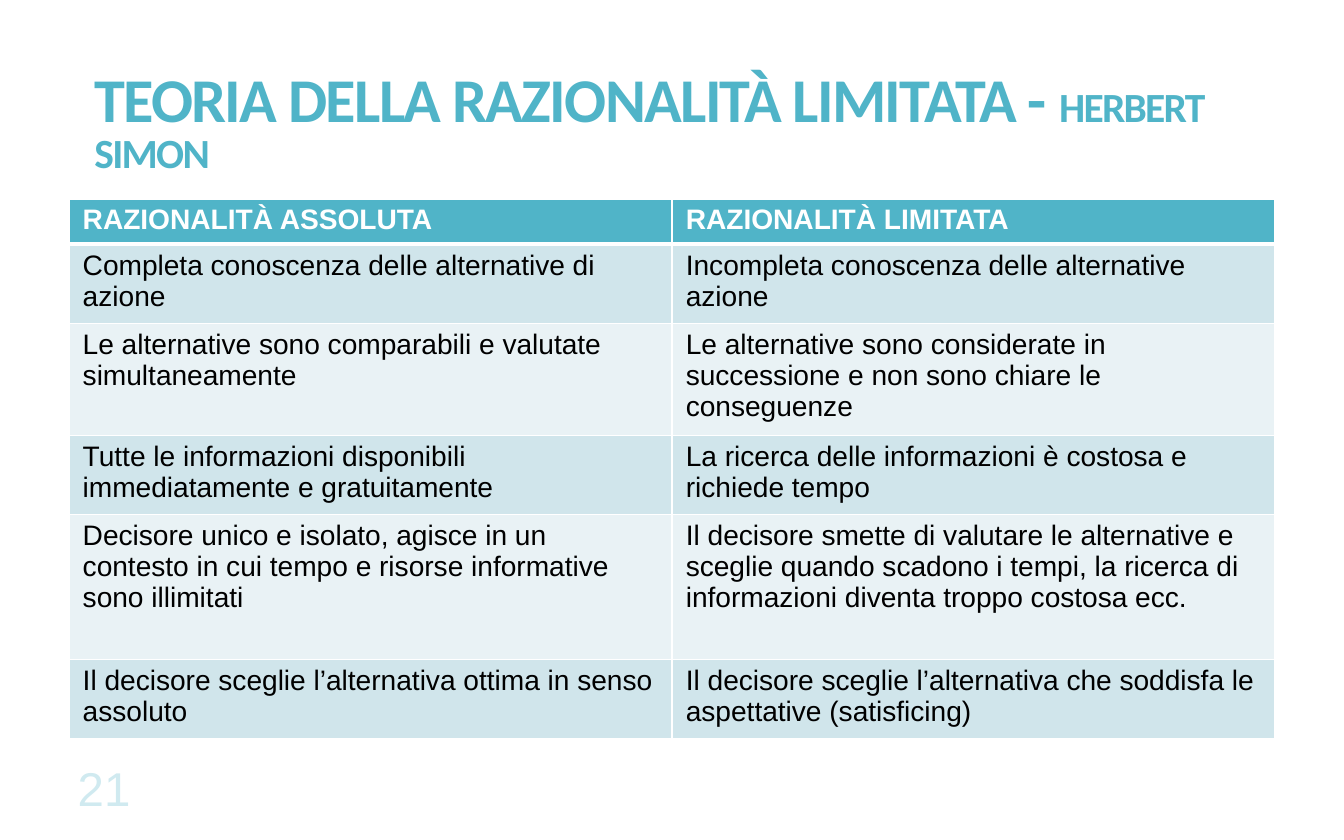
from dataclasses import dataclass

from lxml.etree import SubElement
from pptx import Presentation
from pptx.dml.color import RGBColor
from pptx.enum.text import MSO_ANCHOR
from pptx.oxml.ns import qn
from pptx.util import Cm, Emu, Pt


@dataclass(frozen=True)
class Theme:
    accent: str = "50B4C8"
    band_dark: str = "D0E5EB"
    band_light: str = "E9F2F5"
    white: str = "FFFFFF"
    black: str = "000000"
    page: str = "D0EAF0"
    title_font: str = "Calibri"
    body_font: str = "Arial"
    title_size: float = 42
    author_size: float = 28
    table_size: float = 19
    page_size: float = 32
    rule: float = 1
    header_rule: float = 3


class SlideBuilder:
    def __init__(self, slide, theme):
        self.slide = slide
        self.theme = theme

    def style(self, run, font, size, color, bold=False):
        run.font.name = font
        run.font.size = Pt(size)
        run.font.bold = bold
        run.font.color.rgb = RGBColor.from_string(color)

    def text_box(self, left, top, width, height, anchor):
        box = self.slide.shapes.add_textbox(Cm(left), Cm(top), Cm(width), Cm(height))
        frame = box.text_frame
        frame.word_wrap = True
        frame.vertical_anchor = anchor
        return frame.paragraphs[0]

    def title(self, theory, author):
        theme = self.theme
        heading = self.text_box(2, 1.4, 28.73, 3.12, MSO_ANCHOR.MIDDLE)
        heading.line_spacing = 0.85
        for words, size in ((theory, theme.title_size), (author, theme.author_size)):
            run = heading.add_run()
            run.text = words
            self.style(run, theme.title_font, size, theme.accent, True)
            run.font._element.set("spc", "-113")

    def page_number(self, number):
        theme = self.theme
        page = self.text_box(1.6, 17.96, 3, 1.5, MSO_ANCHOR.TOP)
        page.text = number
        self.style(page.runs[0], theme.body_font, theme.page_size, theme.page)

    def borders(self, cell, top, bottom):
        properties = cell._tc.get_or_add_tcPr()
        rule = self.theme.rule
        for side, width in (("L", rule), ("R", rule), ("T", top), ("B", bottom)):
            line = SubElement(properties, qn(f"a:ln{side}"), w=str(Pt(width)))
            fill = SubElement(line, qn("a:solidFill"))
            SubElement(fill, qn("a:srgbClr"), val=self.theme.white)

    def cell(self, cell, words, row):
        theme = self.theme
        header = row == 0
        self.borders(
            cell,
            theme.header_rule if row == 1 else theme.rule,
            theme.header_rule if header else theme.rule,
        )
        band = theme.band_dark if row % 2 else theme.band_light
        cell.fill.solid()
        cell.fill.fore_color.rgb = RGBColor.from_string(theme.accent if header else band)
        cell.margin_left = cell.margin_right = Cm(0.33)
        cell.margin_top = cell.margin_bottom = Cm(0.13)
        cell.text = words
        color = theme.white if header else theme.black
        run = cell.text_frame.paragraphs[0].runs[0]
        self.style(run, theme.body_font, theme.table_size, color, header)

    def table(self, rows, heights):
        columns = len(rows[0])
        table = self.slide.shapes.add_table(
            len(rows), columns, Cm(1.64), Cm(4.74), Cm(28.72), Cm(sum(heights))
        ).table
        for row, (texts, height) in enumerate(zip(rows, heights)):
            table.rows[row].height = Cm(height)
            for column, words in enumerate(texts):
                self.cell(table.cell(row, column), words, row)


COMPARISON = [
    ("RAZIONALITÀ ASSOLUTA", "RAZIONALITÀ LIMITATA"),
    (
        "Completa conoscenza delle alternative di azione",
        "Incompleta conoscenza delle alternative azione",
    ),
    (
        "Le alternative sono comparabili e valutate simultaneamente",
        "Le alternative sono considerate in successione e non sono chiare le conseguenze",
    ),
    (
        "Tutte le informazioni disponibili immediatamente e gratuitamente",
        "La ricerca delle informazioni è costosa e richiede tempo",
    ),
    (
        "Decisore unico e isolato, agisce in un contesto in cui tempo e risorse "
        "informative sono illimitati",
        "Il decisore smette di valutare le alternative e sceglie quando scadono i tempi, "
        "la ricerca di informazioni diventa troppo costosa ecc.",
    ),
    (
        "Il decisore sceglie l’alternativa ottima in senso assoluto",
        "Il decisore sceglie l’alternativa che soddisfa le aspettative (satisficing)",
    ),
]
ROW_HEIGHTS = [1.08, 1.88, 2.67, 1.88, 3.45, 1.88]


def main():
    presentation = Presentation()
    presentation.slide_width = Emu(11520488)
    presentation.slide_height = Emu(7200900)
    slide = presentation.slides.add_slide(presentation.slide_layouts[6])
    builder = SlideBuilder(slide, Theme())
    builder.title("TEORIA DELLA RAZIONALITÀ LIMITATA - ", "HERBERT SIMON")
    builder.table(COMPARISON, ROW_HEIGHTS)
    builder.page_number("21")
    presentation.save("out.pptx")


if __name__ == "__main__":
    main()
